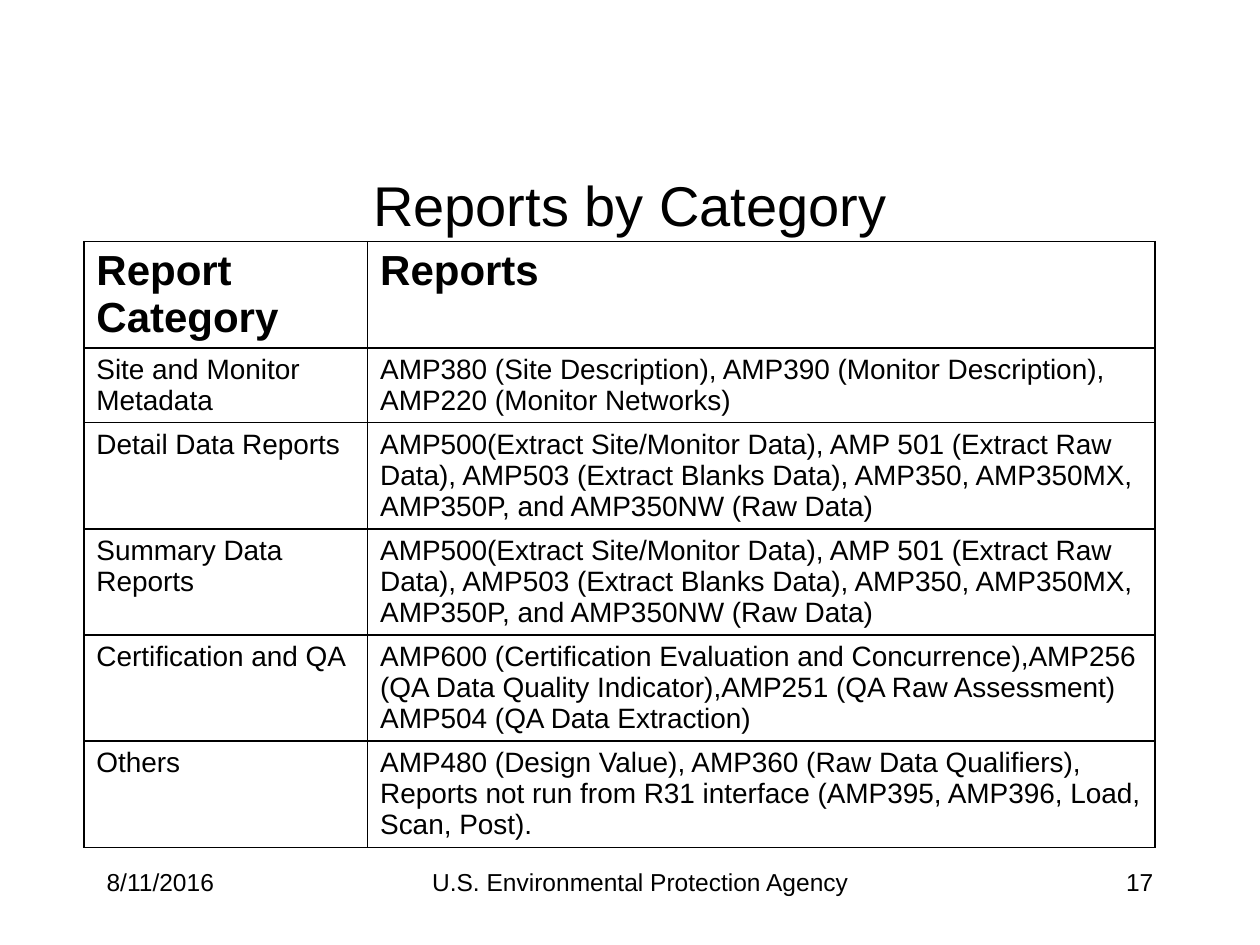
from lxml import etree
from pptx import Presentation
from pptx.dml.color import RGBColor
from pptx.enum.text import MSO_ANCHOR, PP_ALIGN
from pptx.oxml.ns import qn
from pptx.util import Cm, Pt

LEFT, CENTER, RIGHT = PP_ALIGN.LEFT, PP_ALIGN.CENTER, PP_ALIGN.RIGHT
MIDDLE = MSO_ANCHOR.MIDDLE
TITLE_ONLY = 5
FONT = "Arial"
COLORS = {"text": "000000", "border": "000000", "cell": "FFFFFF"}

EXTRACTS = ("AMP500(Extract Site/Monitor Data), AMP 501 (Extract Raw Data), "
            "AMP503 (Extract Blanks Data), AMP350, AMP350MX, AMP350P, "
            "and AMP350NW (Raw Data)")
# Row height in cm, category, reports
ROWS = [
    (2.14, "Report Category", "Reports"),
    (1.5, "Site and Monitor Metadata",
     "AMP380 (Site Description), AMP390 (Monitor Description), "
     "AMP220 (Monitor Networks)"),
    (2.14, "Detail Data Reports", EXTRACTS),
    (2.14, "Summary Data Reports", EXTRACTS),
    (2.14, "Certification and QA",
     "AMP600 (Certification Evaluation and Concurrence),AMP256 "
     "(QA Data Quality Indicator),AMP251 (QA Raw Assessment)\n"
     "AMP504 (QA Data Extraction)"),
    (2.14, "Others",
     "AMP480 (Design Value), AMP360 (Raw Data Qualifiers), Reports not run "
     "from R31 interface (AMP395, AMP396, Load, Scan, Post)."),
]


def write(tf, text, size, align=LEFT, bold=False):
    tf.word_wrap = True
    tf.text = text
    for p in tf.paragraphs:
        p.alignment = align
        p.font.name = FONT
        p.font.size = Pt(size)
        p.font.bold = bold
        p.font.color.rgb = RGBColor.from_string(COLORS["text"])


def add_borders(cell, width=1):
    tc_pr = cell._tc.get_or_add_tcPr()
    for i, side in enumerate(("lnL", "lnR", "lnT", "lnB")):
        ln = etree.Element(qn(f"a:{side}"), w=str(Pt(width)))
        fill = etree.SubElement(ln, qn("a:solidFill"))
        etree.SubElement(fill, qn("a:srgbClr"), val=COLORS["border"])
        tc_pr.insert(i, ln)


def add_title(slide, x, y, w, h):
    sp = slide.shapes.title
    sp.left, sp.top, sp.width, sp.height = x, y, w, h
    write(sp.text_frame, "Reports by Category", 32, CENTER)
    sp.text_frame.vertical_anchor = MIDDLE


def add_report_table(slide, x, y, w):
    h = sum(Cm(row[0]) for row in ROWS)
    table = slide.shapes.add_table(len(ROWS), 2, x, y, w, h).table
    table.horz_banding = False
    table.columns[0].width = Cm(5.72)
    table.columns[1].width = w - Cm(5.72)
    for i, (height, *texts) in enumerate(ROWS):
        table.rows[i].height = Cm(height)
        header = i == 0
        for cell, text in zip(table.rows[i].cells, texts):
            write(cell.text_frame, text, 24 if header else 16, bold=header)
            cell.fill.solid()
            cell.fill.fore_color.rgb = RGBColor.from_string(COLORS["cell"])
            add_borders(cell)


def add_footer(slide, x, y, w, h):
    side = Cm(5.29)
    for text, left, width, align in (
        ("8/11/2016", x, side, LEFT),
        ("U.S. Environmental Protection Agency", x + Cm(3.39), Cm(15.24), CENTER),
        ("17", x + w - side, side, RIGHT),
    ):
        box = slide.shapes.add_textbox(left, y, width, h)
        write(box.text_frame, text, 14, align)


def main():
    prs = Presentation()
    prs.slide_width, prs.slide_height = Cm(25.4), Cm(19.05)
    slide = prs.slides.add_slide(prs.slide_layouts[TITLE_ONLY])
    add_title(slide, Cm(2.12), Cm(2.75), Cm(21.17), Cm(2.75))
    add_report_table(slide, Cm(1.69), Cm(4.87), Cm(21.59))
    add_footer(slide, Cm(1.9), Cm(17.36), Cm(21.6), Cm(1.27))
    prs.save("out.pptx")


if __name__ == "__main__":
    main()
